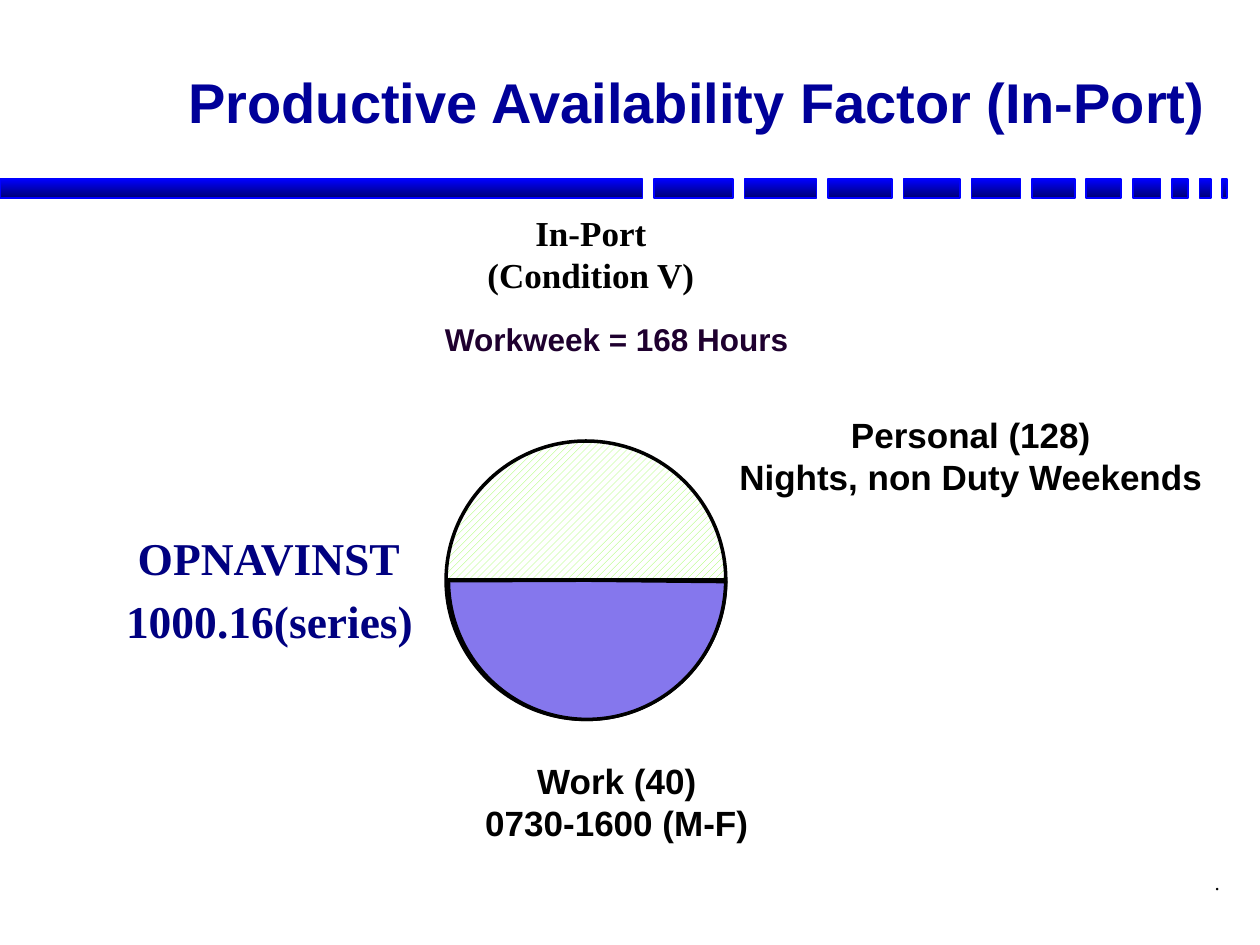
from typing import NamedTuple

from lxml import etree
from pptx import Presentation
from pptx.dml.color import RGBColor
from pptx.enum import dml, shapes, text
from pptx.oxml.ns import qn
from pptx.util import Inches, Pt

COLUMNS, ROWS = 100, 75
WIDTH, HEIGHT = Inches(10), Inches(7.5)
SANS, SERIF = "Arial", "Times New Roman"
DASH_WIDTHS = (51, 6.3, 5.7, 5.1, 4.5, 3.9, 3.4, 2.8, 2.2, 1.3, 0.9, 0.4)
DASH_GAP, DASH_TOP, DASH_HEIGHT = 0.9, 14.2, 1.5


class Area(NamedTuple):
    column: float
    row: float
    columns: float
    rows: float


class Label(NamedTuple):
    lines: tuple[str, ...]
    area: Area
    size: float
    font: str = SANS
    color: str = "000000"
    bold: bool = True
    align: text.PP_ALIGN = text.PP_ALIGN.CENTER
    wrap: bool = False


LABELS = (
    Label((".",), Area(77, 68.5, 20.8, 5), 12, SERIF, bold=False,
          align=text.PP_ALIGN.RIGHT, wrap=True),
    Label(("Productive Availability Factor (In-Port)",), Area(11.9, 4.9, 84.8, 6.4), 32,
          color="000099", align=text.PP_ALIGN.RIGHT, wrap=True),
    Label(("Workweek = 168 Hours",), Area(34.3, 24.9, 29.3, 4), 18, color="1F002F"),
    Label(("Personal (128)", "Nights, non Duty Weekends"), Area(57.5, 32.3, 39.1, 7.7), 20),
    Label(("Work (40)", "0730-1600 (M-F)"), Area(36.7, 59.8, 24.5, 7.7), 20, wrap=True),
    Label(("OPNAVINST",), Area(9.7, 41.6, 23.3, 5.3), 26, SERIF, "000080"),
    Label(("1000.16(series)",), Area(8.9, 46.6, 25, 5.4), 26, SERIF, "000080"),
    Label(("In-Port", "(Condition V)"), Area(37.6, 16.3, 18.6, 7.7), 20, SERIF),
)


def x(column: float) -> int:
    return round(WIDTH * column / COLUMNS)


def y(row: float) -> int:
    return round(HEIGHT * row / ROWS)


def place(area: Area) -> tuple[int, int, int, int]:
    return x(area.column), y(area.row), x(area.columns), y(area.rows)


def rgb(value: str) -> RGBColor:
    return RGBColor.from_string(value)


def add_outlined(slide, kind: shapes.MSO_SHAPE, area: Area, line: str, width: float):
    outlined = slide.shapes.add_shape(kind, *place(area))
    outlined.shadow.inherit = False
    outlined.line.color.rgb = rgb(line)
    outlined.line.width = Pt(width)
    return outlined


def add_dashes(slide) -> None:
    column = 0
    for width in DASH_WIDTHS:
        dash = add_outlined(slide, shapes.MSO_SHAPE.RECTANGLE,
                            Area(column, DASH_TOP, width, DASH_HEIGHT), "0000FF", 1)
        dash.fill.gradient()
        dash.fill.gradient_angle = 270
        for stop, color in zip(dash.fill.gradient_stops, ("0000FF", "000076")):
            stop.color.rgb = rgb(color)
        column += width + DASH_GAP


def add_text(slide, lines: tuple[str, ...], *, area: Area, size: float, font: str,
             color: str, bold: bool, align: text.PP_ALIGN, wrap: bool) -> None:
    frame = slide.shapes.add_textbox(*place(area)).text_frame
    frame.word_wrap = wrap
    frame.text = "\n".join(lines)
    for paragraph in frame.paragraphs:
        paragraph.alignment = align
        for run in paragraph.runs:
            run.font.name = font
            run.font.size = Pt(size)
            run.font.bold = bold
            run.font.color.rgb = rgb(color)


def add_week(slide) -> None:
    personal = add_outlined(slide, shapes.MSO_SHAPE.FLOWCHART_CONNECTOR,
                            Area(35.4, 35, 22.2, 22.1), "000000", 2)
    personal.fill.patterned()
    personal.fill.pattern = dml.MSO_PATTERN.WIDE_UPWARD_DIAGONAL
    personal.fill.fore_color.rgb = rgb("94FD4D")
    personal.fill.back_color.rgb = rgb("FFFFFF")

    divider = slide.shapes.add_connector(shapes.MSO_CONNECTOR.STRAIGHT,
                                         x(35.4), y(46), x(57.6), y(46))
    divider.line.color.rgb = rgb("000000")
    divider.line.width = Pt(2)
    etree.SubElement(divider._element.spPr, qn("a:effectLst"))

    work = add_outlined(slide, shapes.MSO_SHAPE.PIE, Area(35.6, 35, 22, 22.1), "000000", 2)
    work.adjustments[0] = 0.35
    work.adjustments[1] = 107.86
    work.fill.solid()
    work.fill.fore_color.rgb = rgb("8577ED")


def main() -> None:
    deck = Presentation()
    deck.slide_width, deck.slide_height = WIDTH, HEIGHT
    slide = deck.slides.add_slide(deck.slide_layouts[6])
    add_dashes(slide)
    for label in LABELS:
        add_text(slide, label.lines, area=label.area, size=label.size, font=label.font,
                 color=label.color, bold=label.bold, align=label.align, wrap=label.wrap)
    add_week(slide)
    deck.save("out.pptx")


if __name__ == "__main__":
    main()
